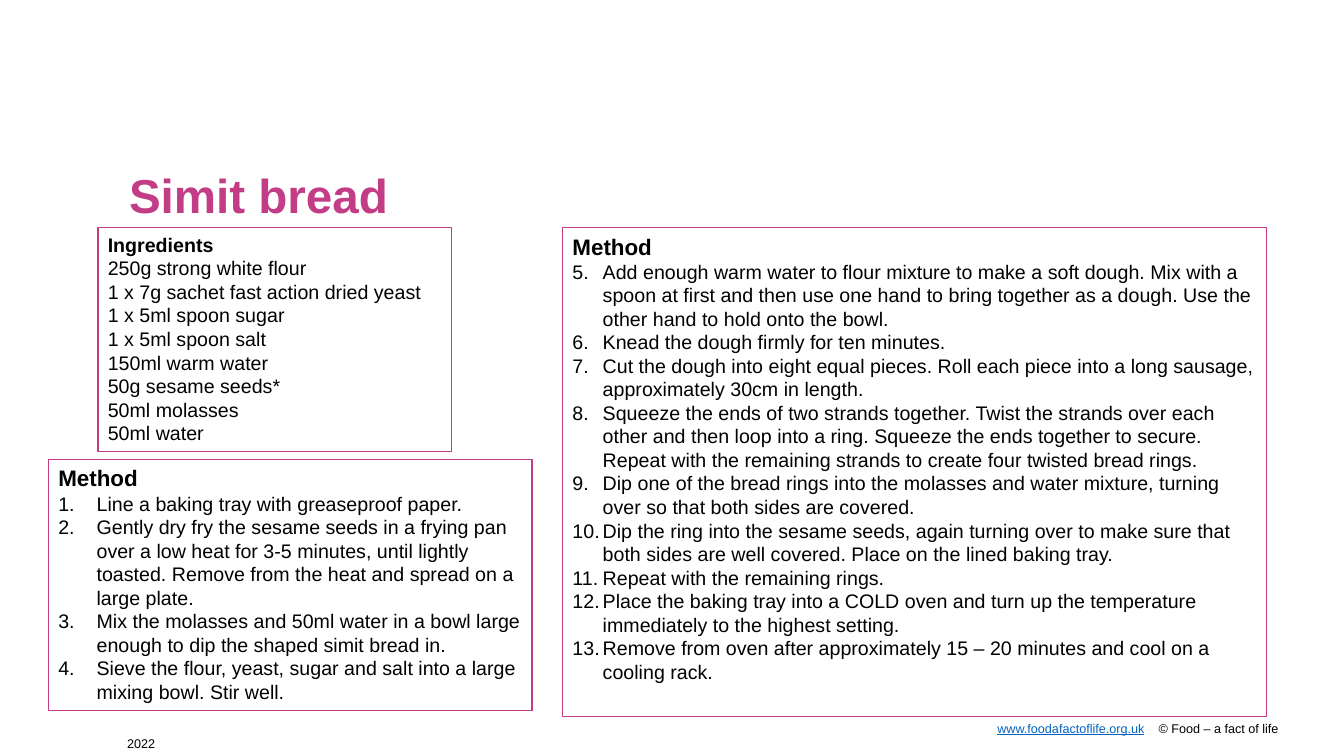
from pptx import Presentation
from pptx.util import Inches, Pt
from pptx.dml.color import RGBColor
from pptx.enum.shapes import MSO_SHAPE
from pptx.enum.text import MSO_ANCHOR, PP_ALIGN
from lxml import etree

RECT = MSO_SHAPE.RECTANGLE
TOP = MSO_ANCHOR.TOP
LEFT = PP_ALIGN.LEFT
PINK = RGBColor(0xC3, 0x3D, 0x86)
BLACK = RGBColor(0, 0, 0)
BLUE = RGBColor(0x05, 0x63, 0xC1)
NS = "{http://schemas.openxmlformats.org/drawingml/2006/main}"

deck = Presentation()
deck.slide_width = Inches(13.33)
deck.slide_height = Inches(7.5)
slide = deck.slides.add_slide(deck.slide_layouts[6])
col = deck.slide_width / 100
row = deck.slide_height / 100


def place(x, y, w, h):
    return [int(n) for n in (x * col, y * row, w * col, h * row)]


def write(para, text, size, color=BLACK, **more):
    run = para.add_run()
    run.text = text
    style = {"name": "Arial", "size": Pt(size), **more}
    for key, value in style.items():
        setattr(run.font, key, value)
    run.font.color.rgb = color


bare = {"margin_left": 0, "margin_right": 0, "margin_top": 0,
        "margin_bottom": 0, "word_wrap": True, "vertical_anchor": TOP}
foot = slide.shapes.add_textbox(*place(9.45, 95.33, 88, 2)).text_frame
title = slide.shapes.add_textbox(*place(9.6, 22.8, 79.74, 10.53)).text_frame
for frame in (foot, title):
    for key, value in bare.items():
        setattr(frame, key, value)

line = foot.paragraphs[0]
tabs = etree.SubElement(line._p.get_or_add_pPr(), NS + "tabLst")
for share, side in ((75.7, "r"), (76.75, "l")):
    etree.SubElement(tabs, NS + "tab", pos=str(int(share * col)), algn=side)
write(line, "\twww.foodafactoflife.org.uk", 9, BLUE, underline=True)
write(line, "\t© Food – a fact of life 2022", 9)

head = title.paragraphs[0]
head.line_spacing = 0.9
write(head, "Simit bread", 34, PINK, bold=True)

foods = [
    "250g strong white flour",
    "1 x 7g sachet fast action dried yeast",
    "1 x 5ml spoon sugar",
    "1 x 5ml spoon salt",
    "150ml warm water",
    "50g sesame seeds*",
    "50ml molasses",
    "50ml water",
]
late = [
    "Add enough warm water to flour mixture to make a soft dough. Mix with a spoon at first and then use one hand to bring together as a dough. Use the other hand to hold onto the bowl.",
    "Knead the dough firmly for ten minutes.",
    "Cut the dough into eight equal pieces. Roll each piece into a long sausage, approximately 30cm in length.",
    "Squeeze the ends of two strands together. Twist the strands over each other and then loop into a ring. Squeeze the ends together to secure. Repeat with the remaining strands to create four twisted bread rings.",
    "Dip one of the bread rings into the molasses and water mixture, turning over so that both sides are covered.",
    "Dip the ring into the sesame seeds, again turning over to make sure that both sides are well covered. Place on the lined baking tray.",
    "Repeat with the remaining rings.",
    "Place the baking tray into a COLD oven and turn up the temperature immediately to the highest setting.",
    "Remove from oven after approximately 15 – 20 minutes and cool on a cooling rack.",
]
early = [
    "Line a baking tray with greaseproof paper.",
    "Gently dry fry the sesame seeds in a frying pan over a low heat for 3-5 minutes, until lightly toasted. Remove from the heat and spread on a large plate.",
    "Mix the molasses and 50ml water in a bowl large enough to dip the shaped simit bread in.",
    "Sieve the flour, yeast, sugar and salt into a large mixing bowl. Stir well.",
]

cards = [
    ((7.28, 30.13, 26.33, 29.6), "Ingredients", 14, foods, 0, 0),
    ((41.86, 30.13, 52.36, 64.67), "Method", 16, late, 5, 2.25),
    ((3.6, 60.8, 36, 33.2), "Method", 16, early, 1, 2.85),
]
for area, name, size, items, start, hang in cards:
    card = slide.shapes.add_shape(RECT, *place(*area))
    card.shadow.inherit = False
    card.fill.background()
    card.line.color.rgb = PINK
    card.line.width = Pt(1)
    frame = card.text_frame
    frame.word_wrap = True
    frame.vertical_anchor = TOP
    para = frame.paragraphs[0]
    para.alignment = LEFT
    write(para, name, size, bold=True)
    for item in items:
        para = frame.add_paragraph()
        para.alignment = LEFT
        if start:
            props = para._p.get_or_add_pPr()
            props.set("marL", str(int(hang * col)))
            props.set("indent", str(-int(hang * col)))
            etree.SubElement(props, NS + "buFont", typeface="Arial")
            etree.SubElement(props, NS + "buAutoNum",
                             type="arabicPeriod", startAt=str(start))
        write(para, item, 14, bold=False)

deck.save("out.pptx")
